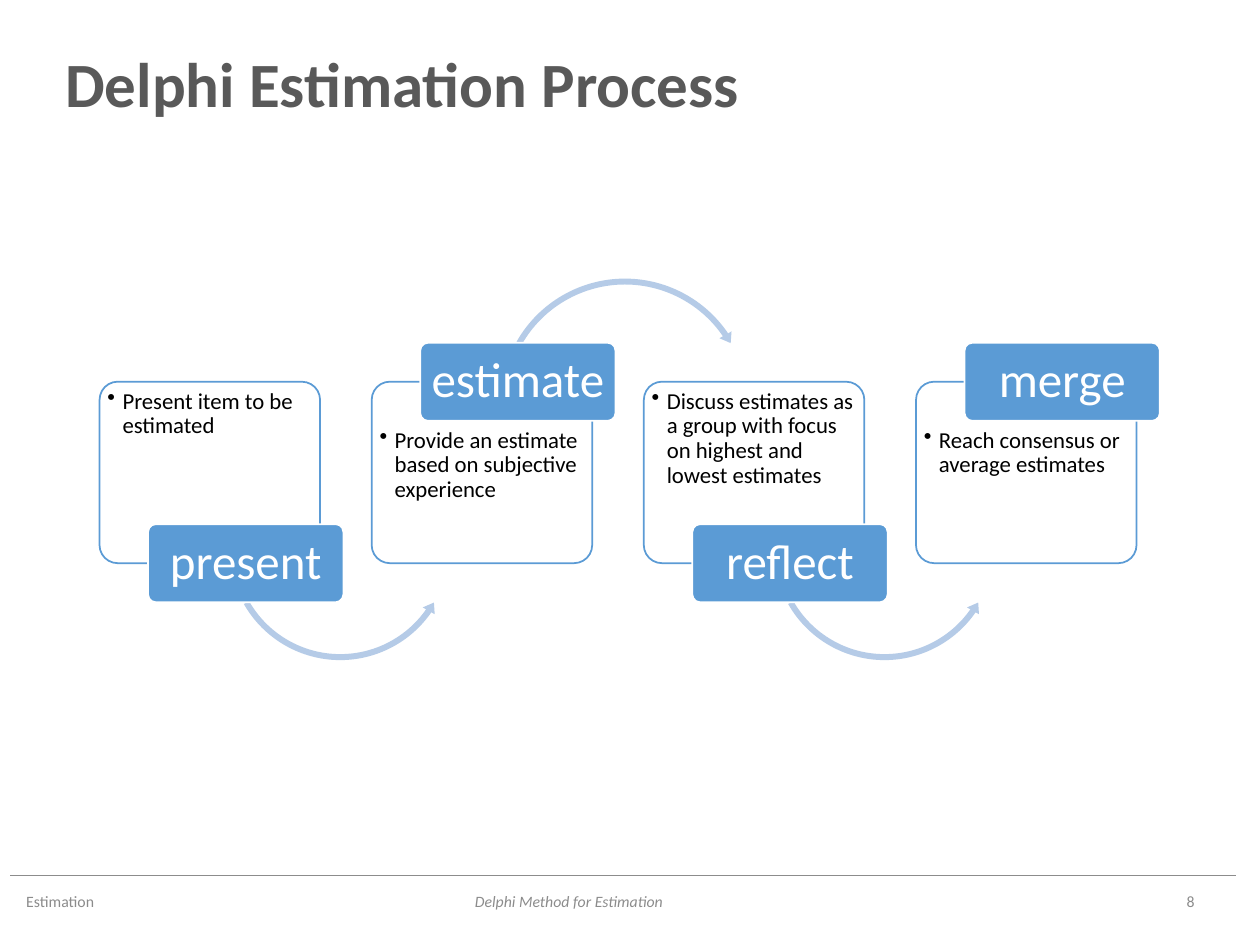
"""Build the Delphi estimation process slide."""
from dataclasses import dataclass

from lxml.etree import SubElement
from pptx import Presentation
from pptx.dml.color import RGBColor
from pptx.enum.shapes import MSO_CONNECTOR, MSO_SHAPE
from pptx.enum.text import MSO_ANCHOR, PP_ALIGN
from pptx.oxml.ns import qn
from pptx.util import Inches, Pt


@dataclass(frozen=True)
class Theme:
    face: str = "Calibri"
    blue: str = "5B9BD5"
    pale: str = "B5CBE7"
    white: str = "FFFFFF"
    black: str = "000000"
    dark: str = "595959"
    gray: str = "8C8C8C"
    head: int = 36
    label: int = 28
    body: int = 13
    foot: int = 9


THEME = Theme()
LEFT, TOP, PITCH = 0.79, 3.03, 2.16
STAGES = [
    ("present", "Present item to be estimated"),
    ("estimate", "Provide an estimate based on subjective experience"),
    ("reflect", "Discuss estimates as a group with focus on highest and lowest estimates"),
    ("merge", "Reach consensus or average estimates"),
]


def write(shape, text, size, color, align=PP_ALIGN.LEFT, anchor=MSO_ANCHOR.MIDDLE,
          pad=(0.1, 0.05, 0.1, 0.05), space=1.0):
    """Set the text of a shape and return its paragraph."""
    frame = shape.text_frame
    frame.word_wrap = True
    frame.vertical_anchor = anchor
    frame.margin_left, frame.margin_top, frame.margin_right, frame.margin_bottom = map(Inches, pad)
    para = frame.paragraphs[0]
    para.text = text
    para.alignment = align
    para.line_spacing = space
    para.font.name = THEME.face
    para.font.size = Pt(size)
    para.font.color.rgb = RGBColor.from_string(color)
    return para


def add_text(slide, box, text, size, color, **style):
    """Add a text box and return its paragraph."""
    return write(slide.shapes.add_textbox(*map(Inches, box)), text, size, color, **style)


def add_form(slide, kind, box, fill, line=None, adjust=(0.1,)):
    """Add a preset shape with flat fill and optional outline."""
    shape = slide.shapes.add_shape(kind, *map(Inches, box))
    shape.shadow.inherit = False
    for i, value in enumerate(adjust):
        shape.adjustments[i] = value
    shape.fill.solid()
    shape.fill.fore_color.rgb = RGBColor.from_string(fill)
    if line:
        shape.line.color.rgb = RGBColor.from_string(line)
        shape.line.width = Pt(1)
    else:
        shape.line.fill.background()
    return shape


def add_card(slide, left, text, raised):
    """Add an outlined card with one bullet, clear of its label."""
    card = add_form(slide, MSO_SHAPE.ROUNDED_RECTANGLE, (left, TOP, 1.75, 1.44),
                    THEME.white, THEME.blue)
    para = write(card, text, THEME.body, THEME.black, anchor=MSO_ANCHOR.TOP,
                 pad=(0.02, 0.33 if raised else 0.02, 0.02, 0.02), space=0.9)
    props = para._p.get_or_add_pPr()
    props.set("marL", str(Inches(0.12)))
    props.set("indent", str(-Inches(0.12)))
    SubElement(props, qn("a:buChar")).set("char", "•")


def add_label(slide, left, text, raised):
    """Add the filled label on the top or bottom edge of a card."""
    top = 2.72 if raised else 4.16
    label = add_form(slide, MSO_SHAPE.ROUNDED_RECTANGLE, (left + 0.385, top, 1.55, 0.62),
                     THEME.blue, THEME.white)
    write(label, text, THEME.label, THEME.white, align=PP_ALIGN.CENTER,
          pad=(0.06, 0.04, 0.06, 0.04), space=0.9)


def add_arc(slide, left, raised):
    """Add the curved arrow that leads to the next card."""
    if raised:
        add_form(slide, MSO_SHAPE.CIRCULAR_ARROW, (left + 0.99, 2.18, 2.04, 2.04),
                 THEME.pale, adjust=(0.023, 2.756, 195.489, 125.755, 0.027))
    else:
        add_form(slide, MSO_SHAPE.LEFT_CIRCULAR_ARROW, (left + 1, 3.45, 1.82, 1.82),
                 THEME.pale, adjust=(0.026, 3.114, 20.869, 90.245, 0.03))


def add_foot(slide):
    """Add the footer rule and its three texts."""
    rule = slide.shapes.add_connector(MSO_CONNECTOR.STRAIGHT, Inches(0.08), Inches(6.95),
                                      Inches(9.81), Inches(6.95))
    rule.line.color.rgb = RGBColor.from_string(THEME.gray)
    rule.line.width = Pt(0.5)
    SubElement(rule._element.spPr, qn("a:effectLst"))
    for left, width, text, align, slant in (
        (3.67, 2.92, "Delphi Method for Estimation", PP_ALIGN.LEFT, True),
        (0.11, 3.38, "Estimation", PP_ALIGN.LEFT, False),
        (8.54, 1.04, "8", PP_ALIGN.RIGHT, False),
    ):
        para = add_text(slide, (left, 6.95, width, 0.4), text, THEME.foot, THEME.gray, align=align)
        para.font.italic = slant


def main():
    """Build and save the slide."""
    deck = Presentation()
    deck.slide_width, deck.slide_height = Inches(10), Inches(7.5)
    slide = deck.slides.add_slide(deck.slide_layouts[6])
    title = add_text(slide, (0.42, 0.17, 9.17, 1.05), "Delphi Estimation Process",
                     THEME.head, THEME.dark, space=0.9)
    title.font.bold = True
    for i, (name, text) in enumerate(STAGES):
        left, raised = LEFT + i * PITCH, i % 2 == 1
        add_card(slide, left, text, raised)
        if i < len(STAGES) - 1:
            add_arc(slide, left, raised)
        add_label(slide, left, name, raised)
    add_foot(slide)
    deck.save("out.pptx")


if __name__ == "__main__":
    main()
